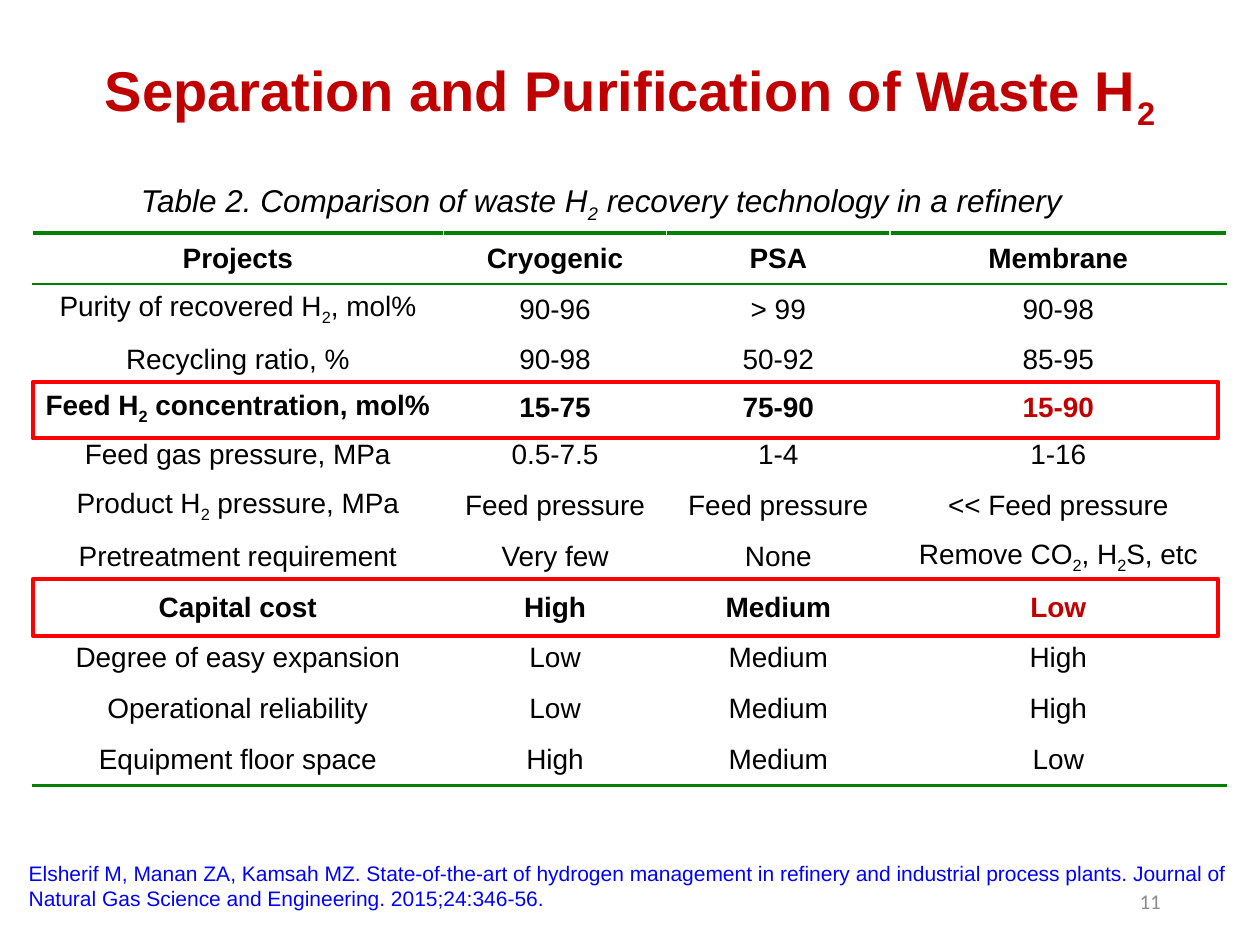
"""Build the slide comparing waste hydrogen recovery technologies."""
from lxml import etree
from pptx import Presentation
from pptx import util as u
from pptx.dml.color import RGBColor
from pptx.enum import shapes, text
from pptx.oxml.ns import qn

BLACK = RGBColor(0x00, 0x00, 0x00)
WHITE = RGBColor(0xFF, 0xFF, 0xFF)
GREEN = RGBColor(0x00, 0x80, 0x00)
DARK_RED = RGBColor(0xC0, 0x00, 0x00)
RED = RGBColor(0xFF, 0x00, 0x00)
BLUE = RGBColor(0x00, 0x00, 0xFF)
GRAY = RGBColor(0x8C, 0x8C, 0x8C)


def add_runs(paragraph, wording, size, color, bold=False, italic=False, name="Arial"):
    """Add runs, lowering every second part between bars as a subscript."""
    for index, part in enumerate(wording.split("|")):
        run = paragraph.add_run()
        run.text = part
        run.font.name = name
        run.font.size = u.Pt(size)
        run.font.bold = bold
        run.font.italic = italic
        run.font.color.rgb = color
        if index % 2:
            run._r.get_or_add_rPr().set("baseline", "-25000")


def set_border(cell, position, side, color, width):
    """Put one border line on a cell."""
    line = etree.Element(qn(f"a:ln{side}"), w=str(u.Pt(width)))
    fill = etree.SubElement(line, qn("a:solidFill"))
    etree.SubElement(fill, qn("a:srgbClr"), val=str(color))
    cell._tc.get_or_add_tcPr().insert(position, line)


presentation = Presentation()
presentation.slide_width = u.Cm(25.4)
presentation.slide_height = u.Cm(19.05)
slide = presentation.slides.add_slide(presentation.slide_layouts[6])

LEFT, CENTER, RIGHT = text.PP_ALIGN.LEFT, text.PP_ALIGN.CENTER, text.PP_ALIGN.RIGHT
TOP, MIDDLE = text.MSO_ANCHOR.TOP, text.MSO_ANCHOR.MIDDLE
text_boxes = [
    ((1.75, 0.08, 21.9, 3.5), CENTER, MIDDLE, 0.9,
     ("Separation and Purification of Waste H|2", 32, DARK_RED, True)),
    ((17.93, 17.65, 5.72, 1.02), RIGHT, MIDDLE, 1.0,
     ("11", 12, GRAY, False, False, "Calibri")),
    ((2.59, 3.53, 20.19, 1.02), LEFT, TOP, 1.0,
     ("Table 2. Comparison of waste H|2| recovery technology in a refinery",
      18, BLACK, False, True)),
    ((0.33, 17.22, 25.07, 1.27), LEFT, TOP, 1.0,
     ("Elsherif M, Manan ZA, Kamsah MZ. State-of-the-art of hydrogen management in "
      "refinery and industrial process plants. Journal of Natural Gas Science and "
      "Engineering. 2015;24:346-56.", 12, BLUE)),
]
for box, alignment, anchor, spacing, content in text_boxes:
    frame = slide.shapes.add_textbox(*map(u.Cm, box)).text_frame
    frame.word_wrap = True
    frame.vertical_anchor = anchor
    paragraph = frame.paragraphs[0]
    paragraph.alignment = alignment
    paragraph.line_spacing = spacing
    add_runs(paragraph, *content)

rows = [
    ("Projects", "Cryogenic", "PSA", "Membrane"),
    ("Purity of recovered H|2|, mol%", "90-96", "> 99", "90-98"),
    ("Recycling ratio, %", "90-98", "50-92", "85-95"),
    ("Feed H|2| concentration, mol%", "15-75", "75-90", "15-90"),
    ("Feed gas pressure, MPa", "0.5-7.5", "1-4", "1-16"),
    ("Product H|2| pressure, MPa", "Feed pressure", "Feed pressure", "<< Feed pressure"),
    ("Pretreatment requirement", "Very few", "None", "Remove CO|2|, H|2|S, etc"),
    ("Capital cost", "High", "Medium", "Low"),
    ("Degree of easy expansion", "Low", "Medium", "High"),
    ("Operational reliability", "Low", "Medium", "High"),
    ("Equipment floor space", "High", "Medium", "Low"),
]
column_widths = (8.29, 4.5, 4.5, 6.79)
highlighted_rows = (3, 7)
last_row = len(rows) - 1
border_above = {0: (GREEN, 2.25), 1: (GREEN, 1)}
border_below = {0: (GREEN, 1), last_row: (GREEN, 2.25)}
plain_border = (WHITE, 1)

table = slide.shapes.add_table(
    len(rows), len(column_widths), u.Cm(0.65), u.Cm(4.7), u.Cm(24.08), u.Cm(11.13)).table
table.first_row = False
table.horz_banding = False
for column, width in zip(table.columns, column_widths):
    column.width = u.Cm(width)

for row_index, row in enumerate(rows):
    table.rows[row_index].height = u.Cm(0.89 if row_index == 3 else 1.024)
    highlighted = row_index in highlighted_rows
    borders = {
        "L": plain_border,
        "R": plain_border,
        "T": border_above.get(row_index, plain_border),
        "B": border_below.get(row_index, plain_border),
    }
    for column_index, wording in enumerate(row):
        cell = table.cell(row_index, column_index)
        cell.fill.background()
        cell.vertical_anchor = MIDDLE
        cell.margin_left = cell.margin_right = u.Cm(0.18)
        cell.margin_top = cell.margin_bottom = 0
        paragraph = cell.text_frame.paragraphs[0]
        paragraph.alignment = CENTER
        color = DARK_RED if highlighted and column_index == 3 else BLACK
        add_runs(paragraph, wording, 16, color, bold=highlighted or row_index == 0)
        for position, (side, border) in enumerate(borders.items()):
            set_border(cell, position, side, *border)

for top in (7.7, 11.68):
    frame_shape = slide.shapes.add_shape(
        shapes.MSO_SHAPE.RECTANGLE, u.Cm(0.66), u.Cm(top), u.Cm(23.9), u.Cm(1.14))
    frame_shape.shadow.inherit = False
    frame_shape.fill.background()
    frame_shape.line.color.rgb = RED
    frame_shape.line.width = u.Pt(2.25)

presentation.save("out.pptx")
